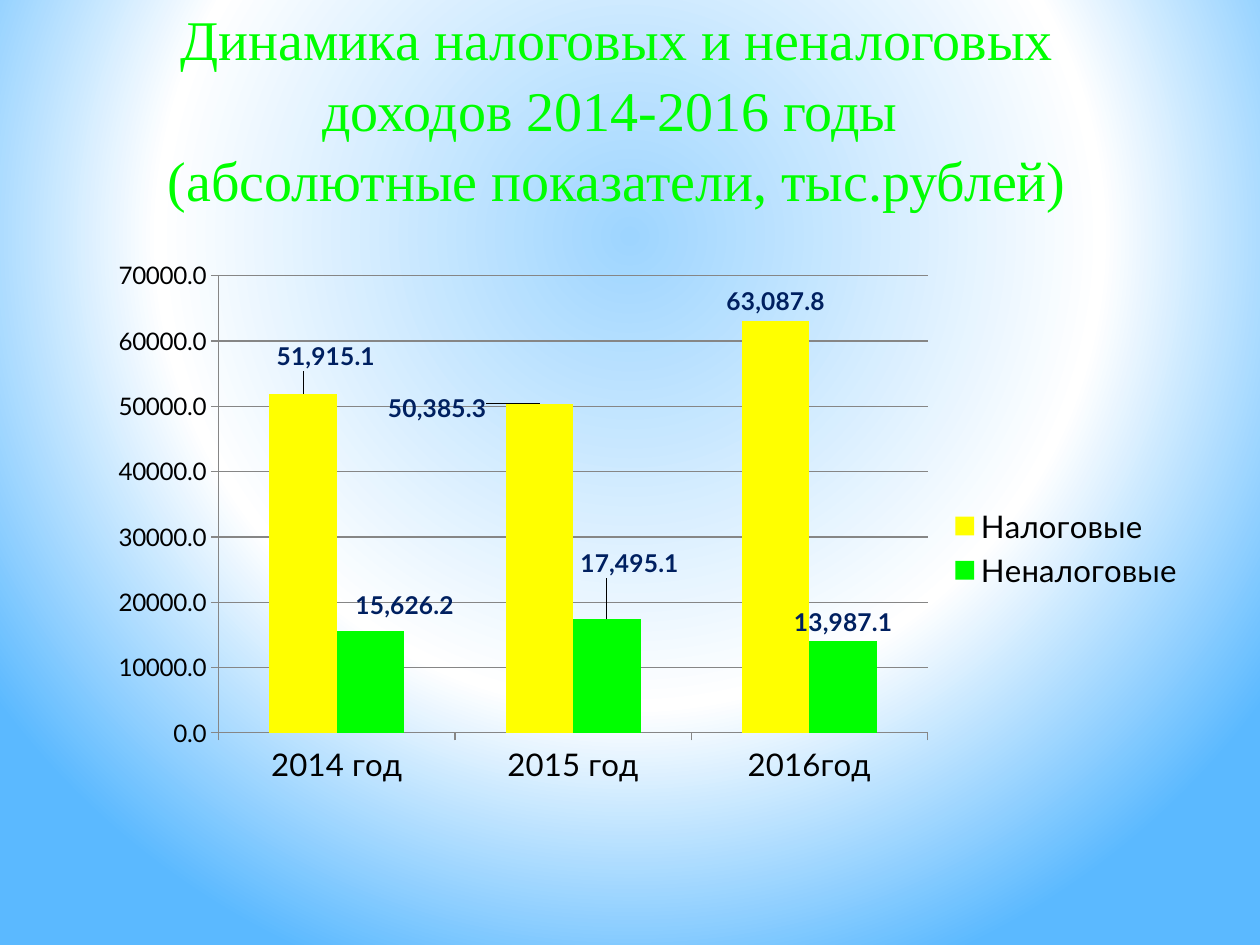
from pptx import Presentation
from pptx.chart.data import CategoryChartData
from pptx.dml.color import RGBColor
from pptx.enum.chart import (XL_CHART_TYPE, XL_LABEL_POSITION,
                             XL_LEGEND_POSITION, XL_TICK_MARK)
from pptx.enum.text import MSO_ANCHOR, MSO_AUTO_SIZE, PP_ALIGN
from pptx.oxml import parse_xml
from pptx.oxml.ns import nsdecls
from pptx.util import Cm, Pt

HUES = {
    "tax": "FFFF00", "other": "00FF00", "title": "00FF00",
    "label": "002060", "text": "000000", "grid": "868686",
    "inner": "9ED5FF", "middle": "FFFFFF", "outer": "5BB9FF",
}
YEARS = ["2014 год", "2015 год", "2016год"]
# Name, colour, values and label shifts (fractions of the chart) by point
ROWS = [
    ("Налоговые ", "tax", [51915.1, 50385.3, 63087.8],
     {0: (0.02, -0.03), 1: (-0.09, 0.04)}),
    ("Неналоговые", "other", [15626.2, 17495.1, 13987.1],
     {0: (0.03, -0.01), 1: (0.02, -0.06)}),
]
TITLE = ("Динамика налоговых и неналоговых доходов 2014-2016 годы \v"
         "(абсолютные показатели, тыс.рублей)")


def tint(key):
    return RGBColor.from_string(HUES[key])


def apply(item, form):
    for name, value in form.items():
        setattr(item, name, value)


def layout(**parts):
    tags = "".join(f'<c:{k} val="{v}"/>' for k, v in parts.items())
    return parse_xml(f'<c:layout {nsdecls("c")}><c:manualLayout>{tags}'
                     '</c:manualLayout></c:layout>')


class Deck:
    def __init__(self):
        self.prs = Presentation()
        apply(self.prs, {"slide_width": Cm(25.4), "slide_height": Cm(19.05)})
        self.slide = self.prs.slides.add_slide(self.prs.slide_layouts[5])

    def font(self, font, size, hue="text", face="Lato", bold=False):
        apply(font, {"size": Pt(size), "name": face, "bold": bold})
        font.color.rgb = tint(hue)

    def back(self, stops):
        """Radial gradient, centred in the upper half."""
        self.slide.background.fill.solid()
        marks = "".join(f'<a:gs pos="{pos * 1000}"><a:srgbClr val="{HUES[key]}"/></a:gs>'
                        for pos, key in stops)
        props = self.slide.element.xpath(".//p:bgPr")[0]
        props[0] = parse_xml(
            f'<a:gradFill {nsdecls("a")} rotWithShape="1"><a:gsLst>{marks}</a:gsLst>'
            '<a:path path="circle"><a:fillToRect l="20000" t="10000" '
            'r="20000" b="60000"/></a:path></a:gradFill>')

    def title(self, text, left, top, width, height):
        shape = self.slide.shapes.title
        apply(shape, {"left": Cm(left), "top": Cm(top),
                      "width": Cm(width), "height": Cm(height)})
        frame = shape.text_frame
        apply(frame, {"text": text, "word_wrap": True,
                      "auto_size": MSO_AUTO_SIZE.NONE,
                      "vertical_anchor": MSO_ANCHOR.MIDDLE})
        para = frame.paragraphs[0]
        apply(para, {"alignment": PP_ALIGN.CENTER, "line_spacing": 1.05})
        for run in para.runs:
            self.font(run.font, 32, "title", "Times New Roman")

    def chart(self, years, rows, left, top, width, height):
        data = CategoryChartData(number_format="#,##0.0")
        data.categories = years
        for name, _, values, _ in rows:
            data.add_series(name, values)
        chart = self.slide.shapes.add_chart(
            XL_CHART_TYPE.COLUMN_CLUSTERED, Cm(left), Cm(top),
            Cm(width), Cm(height), data).chart
        apply(chart, {"has_title": False, "has_legend": True})
        self.font(chart.font, 17.8)
        apply(chart.legend, {"position": XL_LEGEND_POSITION.RIGHT,
                             "include_in_layout": False})
        plot = chart.plots[0]
        apply(plot, {"gap_width": 150, "overlap": 0, "vary_by_categories": False})
        self.axes(chart)
        for line, row in zip(plot.series, rows):
            self.bars(line, row[1], row[3])
        # Fixed inner plot area
        area = chart.element.xpath(".//c:plotArea")[0]
        for old in area.xpath("./c:layout"):
            area.remove(old)
        area.insert(0, layout(layoutTarget="inner", xMode="edge", yMode="edge",
                              x=0.138, y=0.04, w=0.624, h=0.772))

    def axes(self, chart):
        scale = chart.value_axis
        for axis, size in ((chart.category_axis, 17.8), (scale, 13.8)):
            apply(axis, {"major_tick_mark": XL_TICK_MARK.OUTSIDE,
                         "minor_tick_mark": XL_TICK_MARK.NONE})
            self.font(axis.tick_labels.font, size)
            self.rule(axis.format.line)
        apply(scale, {"minimum_scale": 0, "maximum_scale": 70000,
                      "major_unit": 10000, "has_major_gridlines": True})
        apply(scale.tick_labels, {"number_format": "0.0",
                                  "number_format_is_linked": False})
        self.rule(scale.major_gridlines.format.line)

    def rule(self, line):
        line.color.rgb = tint("grid")
        line.width = Pt(0.75)

    def bars(self, line, hue, shifts):
        line.format.fill.solid()
        line.format.fill.fore_color.rgb = tint(hue)
        labels = line.data_labels
        apply(labels, {"show_value": True, "number_format": "#,##0.0",
                       "number_format_is_linked": False,
                       "position": XL_LABEL_POSITION.OUTSIDE_END})
        self.font(labels.font, 14, "label", bold=True)
        # Labels moved off their usual place
        for num, (x, y) in shifts.items():
            label = line.points[num].data_label
            label.position = XL_LABEL_POSITION.OUTSIDE_END
            self.font(label.font, 14, "label", bold=True)
            mark = labels._element.xpath(f"./c:dLbl[c:idx/@val='{num}']")[0]
            mark.insert(1, layout(x=x, y=y))

    def save(self):
        self.prs.save("out.pptx")


def main():
    deck = Deck()
    deck.back([(0, "inner"), (60, "middle"), (100, "outer")])
    deck.chart(YEARS, ROWS, 1.25, 5.08, 22.9, 11.94)
    deck.title(TITLE, 1.9, 0.91, 21.08, 2.5)
    deck.save()


if __name__ == "__main__":
    main()
